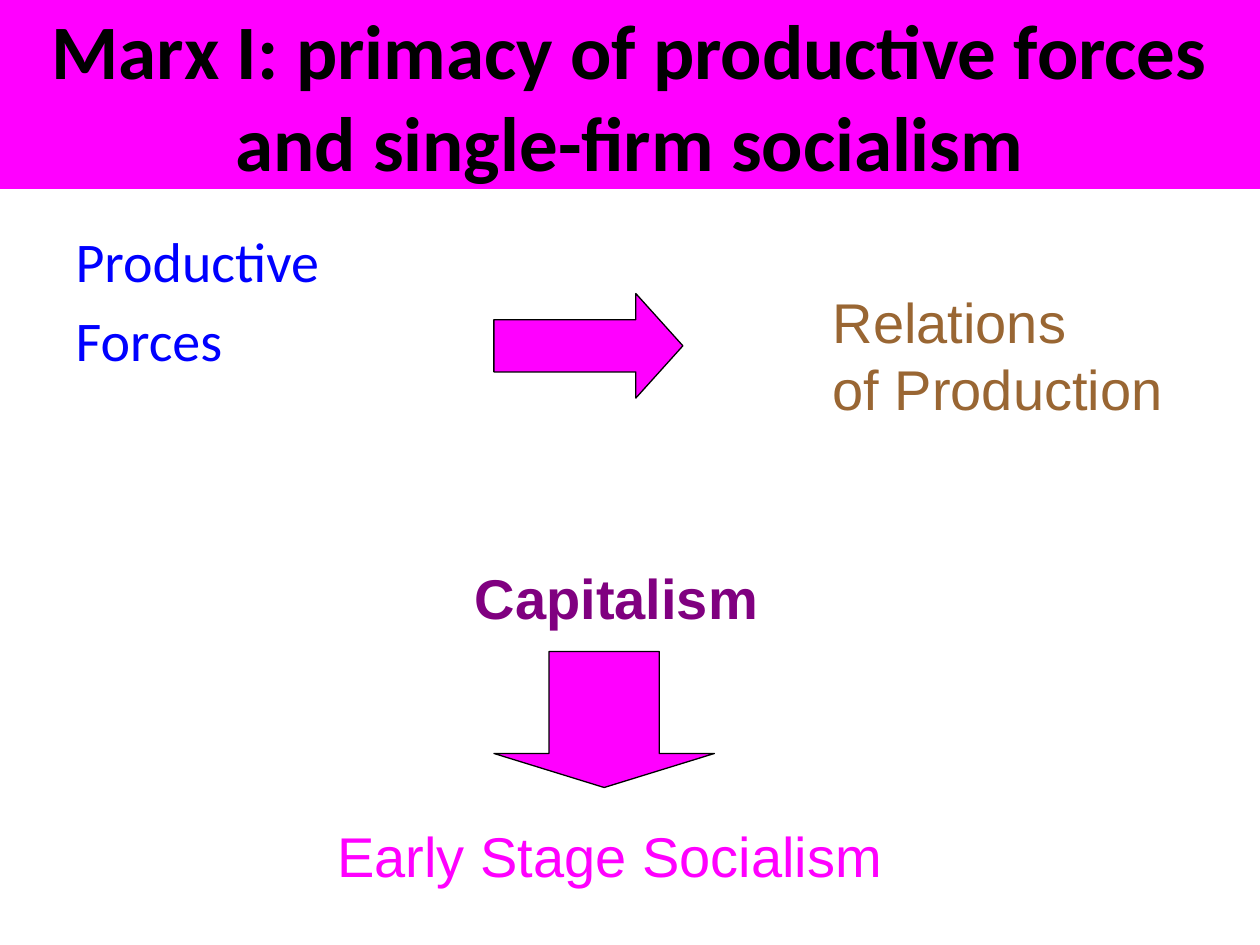
from dataclasses import dataclass

from pptx import Presentation
from pptx.dml.color import RGBColor
from pptx.enum.shapes import MSO_SHAPE as Shape
from pptx.enum.text import MSO_ANCHOR as Anchor, MSO_AUTO_SIZE as AutoSize, PP_ALIGN as Align
from pptx.oxml.ns import qn
from pptx.util import Inches, Pt


@dataclass(frozen=True)
class Theme:
    magenta: str = "FF00FF"
    black: str = "000000"
    blue: str = "0000FF"
    brown: str = "996633"
    purple: str = "800080"
    heading_font: str = "Calibri"
    label_font: str = "Arial"
    title_size: int = 44
    text_size: int = 32
    paragraph_gap: float = 6.4  # 20 % of the text size
    outline: float = 0.75
    hanging_indent: float = 0.38


class SlideBuilder:
    def __init__(self, slide, theme):
        self.slide = slide
        self.theme = theme

    def place(self, shape, box):
        shape.left, shape.top, shape.width, shape.height = map(Inches, box)

    def paint(self, shape, color):
        shape.fill.solid()
        shape.fill.fore_color.rgb = RGBColor.from_string(color)

    def add_lines(self, frame, lines, font, size, color, bold=False, gap=0):
        for index, line in enumerate(lines):
            paragraph = frame.add_paragraph() if index else frame.paragraphs[0]
            paragraph.space_before = Pt(gap)
            run = paragraph.add_run()
            run.text = line
            run.font.name = font
            run.font.size = Pt(size)
            run.font.bold = bold
            run.font.color.rgb = RGBColor.from_string(color)

    def title(self, text, box):
        shape = self.slide.shapes.title
        self.place(shape, box)
        self.paint(shape, self.theme.magenta)
        frame = shape.text_frame
        frame.auto_size = AutoSize.NONE
        frame.vertical_anchor = Anchor.MIDDLE
        self.add_lines(frame, [text], self.theme.heading_font, self.theme.title_size,
                       self.theme.black, bold=True)
        frame.paragraphs[0].alignment = Align.CENTER

    def body(self, lines, box, color):
        shape = self.slide.placeholders[1]
        self.place(shape, box)
        frame = shape.text_frame
        frame.auto_size = AutoSize.NONE
        self.add_lines(frame, lines, self.theme.heading_font, self.theme.text_size,
                       color, gap=self.theme.paragraph_gap)
        # Hanging indent without bullets
        indent = Inches(self.theme.hanging_indent)
        for paragraph in frame.paragraphs:
            properties = paragraph._p.get_or_add_pPr()
            properties.set("marL", str(indent))
            properties.set("indent", str(-indent))
            properties.append(properties.makeelement(qn("a:buNone"), {}))

    def label(self, lines, box, color, bold=False, gap=0, wrap=False):
        frame = self.slide.shapes.add_textbox(*map(Inches, box)).text_frame
        frame.word_wrap = wrap
        frame.auto_size = AutoSize.SHAPE_TO_FIT_TEXT
        self.add_lines(frame, lines, self.theme.label_font, self.theme.text_size,
                       color, bold, gap)

    def arrow(self, kind, box, head):
        shape = self.slide.shapes.add_shape(kind, *map(Inches, box))
        shape.shadow.inherit = False
        shape.adjustments[0] = 0.5
        shape.adjustments[1] = head
        self.paint(shape, self.theme.magenta)
        shape.line.color.rgb = RGBColor.from_string(self.theme.black)
        shape.line.width = Pt(self.theme.outline)


def main():
    presentation = Presentation()
    presentation.slide_width = Inches(10)
    presentation.slide_height = Inches(7.5)
    theme = Theme()
    slide = presentation.slides.add_slide(presentation.slide_layouts[1])
    builder = SlideBuilder(slide, theme)

    # Title band
    builder.title("Marx I: primacy of productive forces and single-firm socialism",
                  (0, 0, 10, 1.5))

    # Productive forces determine relations of production
    builder.body(["Productive", "Forces"], (0.5, 1.75, 9, 4.95), theme.blue)
    builder.arrow(Shape.RIGHT_ARROW, (3.92, 2.33, 1.5, 0.83), head=0.45)
    builder.label(["Relations", "of Production"], (6.51, 2.23, 2.82, 1.17), theme.brown)

    # Capitalism leads to socialism
    builder.label(["Capitalism"], (3.67, 4.42, 2.45, 1.03), theme.purple,
                  bold=True, gap=theme.paragraph_gap)
    builder.arrow(Shape.DOWN_ARROW, (3.92, 5.17, 1.75, 1.08), head=0.25)
    builder.label(["Early Stage Socialism"], (2.58, 6.47, 6, 1.03), theme.magenta, wrap=True)

    presentation.save("out.pptx")


if __name__ == "__main__":
    main()
